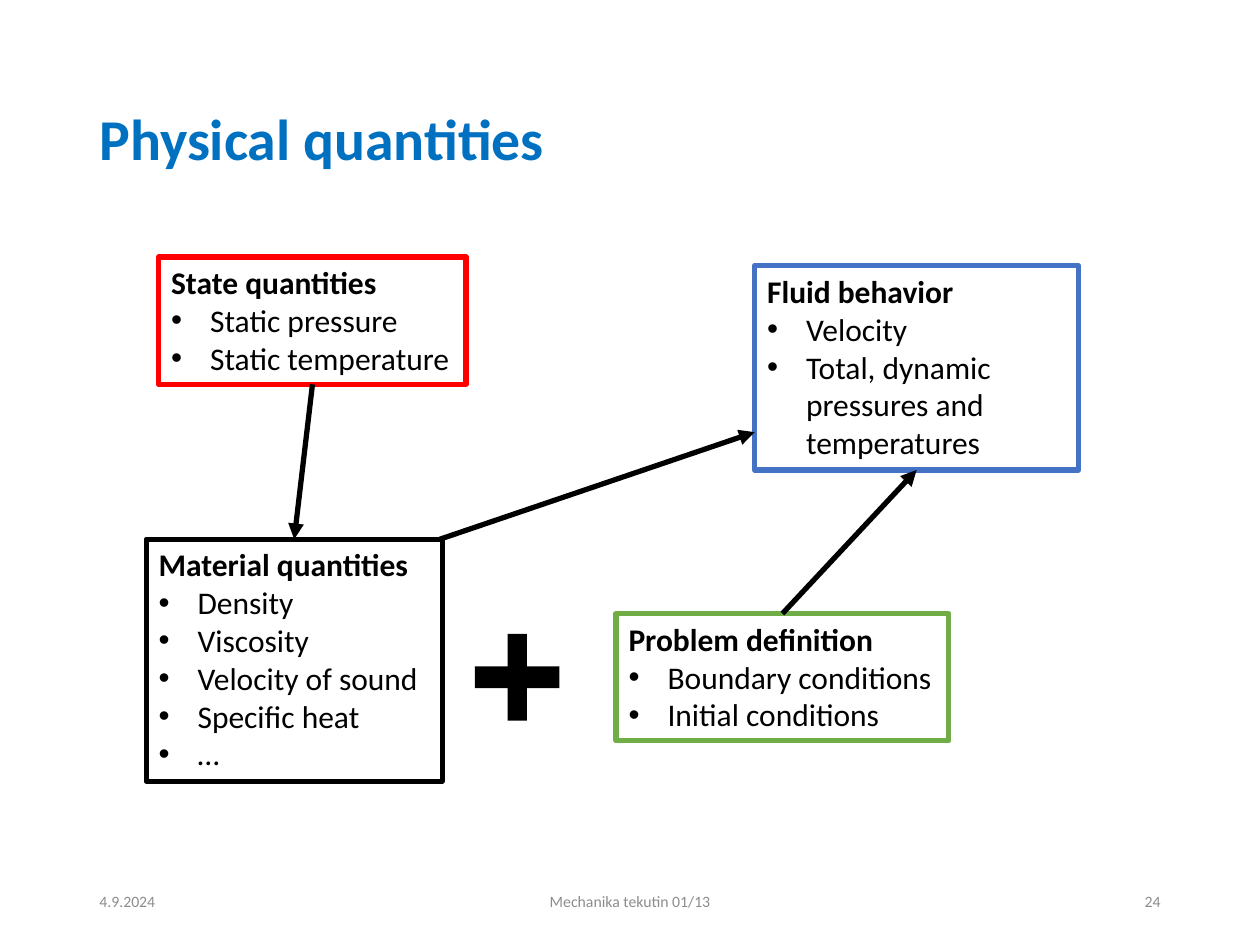
from dataclasses import dataclass

from lxml import etree
from pptx import Presentation
from pptx.dml.color import RGBColor
from pptx.enum import shapes, text
from pptx.oxml import ns
from pptx.util import Inches, Pt


@dataclass(frozen=True)
class Theme:
    font: str = "Calibri"
    title: str = "0070C0"
    ink: str = "000000"
    muted: str = "8C8C8C"
    state: str = "FF0000"
    fluid: str = "4472C4"
    problem: str = "70AD47"
    title_size: float = 33
    body_size: float = 18
    footer_size: float = 9
    line_width: float = 3


@dataclass(frozen=True)
class Area:
    left: float
    top: float
    width: float
    height: float

    def lengths(self):
        return [Inches(v) for v in (self.left, self.top, self.width, self.height)]


@dataclass(frozen=True)
class Panel:
    name: str
    area: Area
    color: str
    items: tuple[str, ...]
    wrap: bool = False


THEME = Theme()
TOP, BOTTOM = 0, 2
BULLET_INDENT = Inches(0.31)

PANELS = (
    Panel("Fluid behavior", Area(5.99, 2.11, 2.57, 1.62), THEME.fluid,
          ("Velocity", "Total, dynamic pressures and temperatures"), wrap=True),
    Panel("Problem definition", Area(4.89, 4.87, 2.64, 1.01), THEME.problem,
          ("Boundary conditions", "Initial conditions")),
    Panel("State quantities", Area(1.26, 2.04, 2.44, 1.01), THEME.state,
          ("Static pressure", "Static temperature")),
    Panel("Material quantities", Area(1.16, 4.28, 2.35, 1.92), THEME.ink,
          ("Density", "Viscosity", "Velocity of sound", "Specific heat", "…")),
)

FOOTERS = (
    ("4.9.2024", Area(0.69, 6.95, 2.25, 0.4), text.PP_ALIGN.LEFT),
    ("Mechanika tekutin 01/13", Area(3.31, 6.95, 3.38, 0.4), text.PP_ALIGN.CENTER),
    ("24", Area(7.06, 6.95, 2.25, 0.4), text.PP_ALIGN.RIGHT),
)


def write(para, words: str, *, size: float = THEME.body_size, color: str = THEME.ink,
          bold: bool = False, align=text.PP_ALIGN.LEFT) -> None:
    para.alignment = align
    span = para.add_run()
    span.text = words
    span.font.name = THEME.font
    span.font.size = Pt(size)
    span.font.bold = bold
    span.font.color.rgb = RGBColor.from_string(color)


def add_label(page, words: str, area: Area, **style):
    """Place one vertically centred line of text and return its paragraph."""
    box = page.shapes.add_textbox(*area.lengths())
    box.text_frame.word_wrap = True
    box.text_frame.vertical_anchor = text.MSO_ANCHOR.MIDDLE
    para = box.text_frame.paragraphs[0]
    write(para, words, **style)
    return para


def add_bullet(para) -> None:
    props = para._p.get_or_add_pPr()
    props.set("marL", str(BULLET_INDENT))
    props.set("indent", str(-BULLET_INDENT))
    etree.SubElement(props, ns.qn("a:buFont")).set("typeface", "Arial")
    etree.SubElement(props, ns.qn("a:buChar")).set("char", "•")


def add_panel(page, panel: Panel):
    box = page.shapes.add_textbox(*panel.area.lengths())
    box.line.color.rgb = RGBColor.from_string(panel.color)
    box.line.width = Pt(THEME.line_width)
    frame = box.text_frame
    frame.word_wrap = panel.wrap
    frame.auto_size = text.MSO_AUTO_SIZE.SHAPE_TO_FIT_TEXT
    write(frame.paragraphs[0], panel.name, bold=True)
    for item in panel.items:
        para = frame.add_paragraph()
        add_bullet(para)
        write(para, item)
    return box


def add_arrow(page, start=(0, 0), end=(0, 0)):
    arrow = page.shapes.add_connector(
        shapes.MSO_CONNECTOR.STRAIGHT, *(Inches(v) for v in (*start, *end)))
    arrow.line.color.rgb = RGBColor.from_string(THEME.ink)
    arrow.line.width = Pt(THEME.line_width)
    etree.SubElement(arrow.line._get_or_add_ln(), ns.qn("a:tailEnd")).set("type", "triangle")
    etree.SubElement(arrow._element.spPr, ns.qn("a:effectLst"))
    return arrow


def join(page, source, source_side: int, target, target_side: int) -> None:
    arrow = add_arrow(page)
    arrow.begin_connect(source, source_side)
    arrow.end_connect(target, target_side)


def add_plus(page, area: Area) -> None:
    plus = page.shapes.add_shape(shapes.MSO_SHAPE.CROSS, *area.lengths())
    plus.adjustments[0] = 0.386
    plus.shadow.inherit = False
    plus.fill.solid()
    plus.fill.fore_color.rgb = RGBColor.from_string(THEME.ink)
    plus.line.fill.background()


def main() -> None:
    deck = Presentation()
    deck.slide_width, deck.slide_height = Inches(10), Inches(7.5)
    page = deck.slides.add_slide(deck.slide_layouts[6])

    title = add_label(page, "Physical quantities", Area(0.69, 0.4, 8.62, 1.45),
                      size=THEME.title_size, color=THEME.title, bold=True)
    title.line_spacing = 0.9
    for words, area, align in FOOTERS:
        add_label(page, words, area, size=THEME.footer_size, color=THEME.muted, align=align)

    fluid, problem, state, material = [add_panel(page, panel) for panel in PANELS]
    join(page, state, BOTTOM, material, TOP)
    add_plus(page, Area(3.77, 5.03, 0.67, 0.69))
    add_arrow(page, start=(3.49, 4.28), end=(5.99, 3.43))
    join(page, problem, TOP, fluid, BOTTOM)

    deck.save("out.pptx")


if __name__ == "__main__":
    main()
